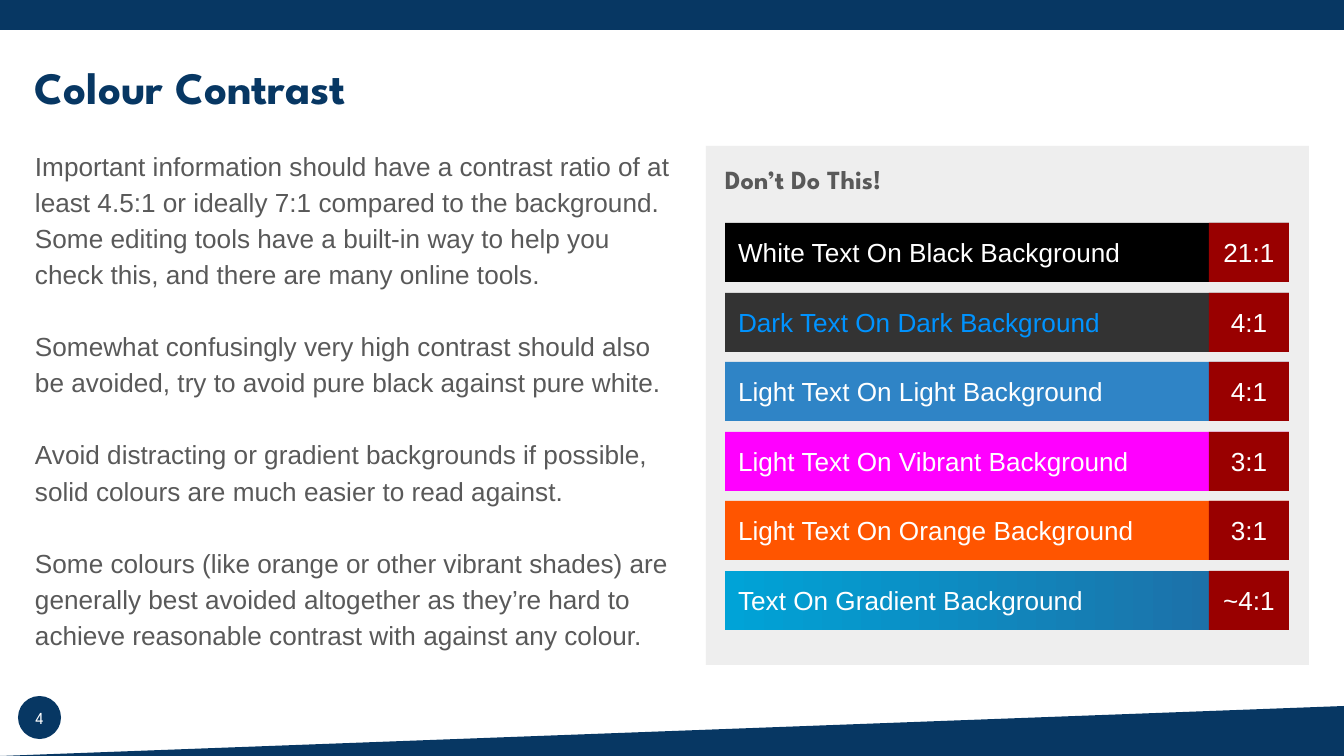
import pptx
import pptx.util
import pptx.dml.color
import pptx.enum.shapes
import pptx.enum.text
from dataclasses import dataclass

SHAPE = pptx.enum.shapes.MSO_SHAPE
ALIGN = pptx.enum.text.PP_ALIGN
ANCHOR = pptx.enum.text.MSO_ANCHOR
EMU_PER_PX = 914400 / 134.4


def px(n):
    return pptx.util.Emu(round(n * EMU_PER_PX))


@dataclass(frozen=True)
class Theme:
    navy: str = "073763"
    grey: str = "595959"
    panel: str = "EEEEEE"
    badge: str = "990000"
    white: str = "FFFFFF"
    heading_font: str = "League Spartan"
    body_font: str = "Arial"
    title_size: float = 24
    body_size: float = 14
    number_size: float = 9


class SlideBuilder:
    def __init__(self, slide, theme):
        self.slide = slide
        self.theme = theme

    def shape(self, kind, box, fill, parent=None):
        """Add an unlined preset; a pair of colours as fill runs right to left."""
        shapes = (parent or self.slide).shapes
        sp = shapes.add_shape(kind, *map(px, box))
        sp.shadow.inherit = False
        sp.line.fill.background()
        if isinstance(fill, tuple):
            sp.fill.gradient()
            sp.fill.gradient_angle = 180
            for stop, color in zip(sp.fill.gradient_stops, fill):
                stop.color.rgb = pptx.dml.color.RGBColor.from_string(color)
        else:
            sp.fill.solid()
            sp.fill.fore_color.rgb = pptx.dml.color.RGBColor.from_string(fill)
        return sp

    def set_text(self, sp, paragraphs, font, color, inset=0,
                 anchor=ANCHOR.TOP, **para_format):
        tf = sp.text_frame
        frame_format = {"word_wrap": True, "vertical_anchor": anchor}
        for side in ("left", "top", "right", "bottom"):
            frame_format[f"margin_{side}"] = px(inset)
        for name, value in frame_format.items():
            setattr(tf, name, value)
        para_format = {"alignment": ALIGN.LEFT, **para_format}
        for i, text in enumerate(paragraphs):
            p = tf.add_paragraph() if i else tf.paragraphs[0]
            for name, value in para_format.items():
                setattr(p, name, value)
            r = p.add_run()
            r.text = text
            for name, value in font.items():
                setattr(r.font, name, value)
            r.font.color.rgb = pptx.dml.color.RGBColor.from_string(color)

    def text(self, box, paragraphs, font, color, **options):
        sp = self.slide.shapes.add_textbox(*map(px, box))
        self.set_text(sp, paragraphs, font, color, **options)

    def sample_row(self, top, label, ratio, fill, color, font):
        """Add a colour sample with its contrast ratio at the right end."""
        group = self.slide.shapes.add_group_shape()
        bar = self.shape(SHAPE.RECTANGLE, (725, top, 564, 59), fill, group)
        self.set_text(bar, [label], font, color, inset=13)
        badge = self.shape(SHAPE.RECTANGLE, (1209, top, 80, 59),
                           self.theme.badge, group)
        self.set_text(badge, [ratio], font, self.theme.white, inset=13,
                      alignment=ALIGN.CENTER)


BODY = [
    "Important information should have a contrast ratio of at least 4.5:1 or "
    "ideally 7:1 compared to the background. Some editing tools have a "
    "built-in way to help you check this, and there are many online tools.",
    "Somewhat confusingly very high contrast should also be avoided, try to "
    "avoid pure black against pure white.",
    "Avoid distracting or gradient backgrounds if possible, solid colours are "
    "much easier to read against.",
    "Some colours (like orange or other vibrant shades) are generally best "
    "avoided altogether as they’re hard to achieve reasonable contrast with "
    "against any colour.",
]

SAMPLES = [
    ("White Text On Black Background", "21:1", "000000", "FFFFFF"),
    ("Dark Text On Dark Background", "4:1", "333333", "0093FF"),
    ("Light Text On Light Background", "4:1", "2F84C6", "FFFFFF"),
    ("Light Text On Vibrant Background", "3:1", "FF00FF", "FFFFFF"),
    ("Light Text On Orange Background", "3:1", "FF5500", "FFFFFF"),
    ("Text On Gradient Background", "~4:1", ("2169A1", "00A3D7"), "FFFFFF"),
]


def main():
    prs = pptx.Presentation()
    prs.slide_width, prs.slide_height = px(1344), px(756)
    t = Theme()
    s = SlideBuilder(prs.slides.add_slide(prs.slide_layouts[6]), t)

    def font(name, size, bold=False):
        return {"name": name, "size": pptx.util.Pt(size), "bold": bold}

    body_font = font(t.body_font, t.body_size)

    wedge = s.shape(SHAPE.RIGHT_TRIANGLE, (0, 706, 1344, 50), t.navy)
    wedge.element.spPr.xfrm.set("flipH", "1")
    s.shape(SHAPE.OVAL, (18, 696, 43, 43), t.navy)
    s.text((18, 702, 43, 31), ["4"], font(t.heading_font, t.number_size),
           t.white, inset=5, anchor=ANCHOR.MIDDLE, alignment=ALIGN.CENTER)
    s.shape(SHAPE.RECTANGLE, (0, 0, 1344, 30), t.navy)
    s.shape(SHAPE.RECTANGLE, (706, 146, 603, 519), t.panel)

    s.text((35, 60, 1274, 58), ["Colour Contrast"],
           font(t.heading_font, t.title_size, True), t.navy)
    s.text((35, 146, 637, 519), BODY, body_font, t.grey,
           line_spacing=1.15, space_after=pptx.util.Pt(19.3))
    s.text((725, 163, 601, 58), ["Don’t Do This!"],
           font(t.heading_font, t.body_size, True), t.grey)

    for i, (label, ratio, fill, color) in enumerate(SAMPLES):
        s.sample_row(223 + round(i * 69.6), label, ratio, fill, color, body_font)

    prs.save("out.pptx")


if __name__ == "__main__":
    main()
